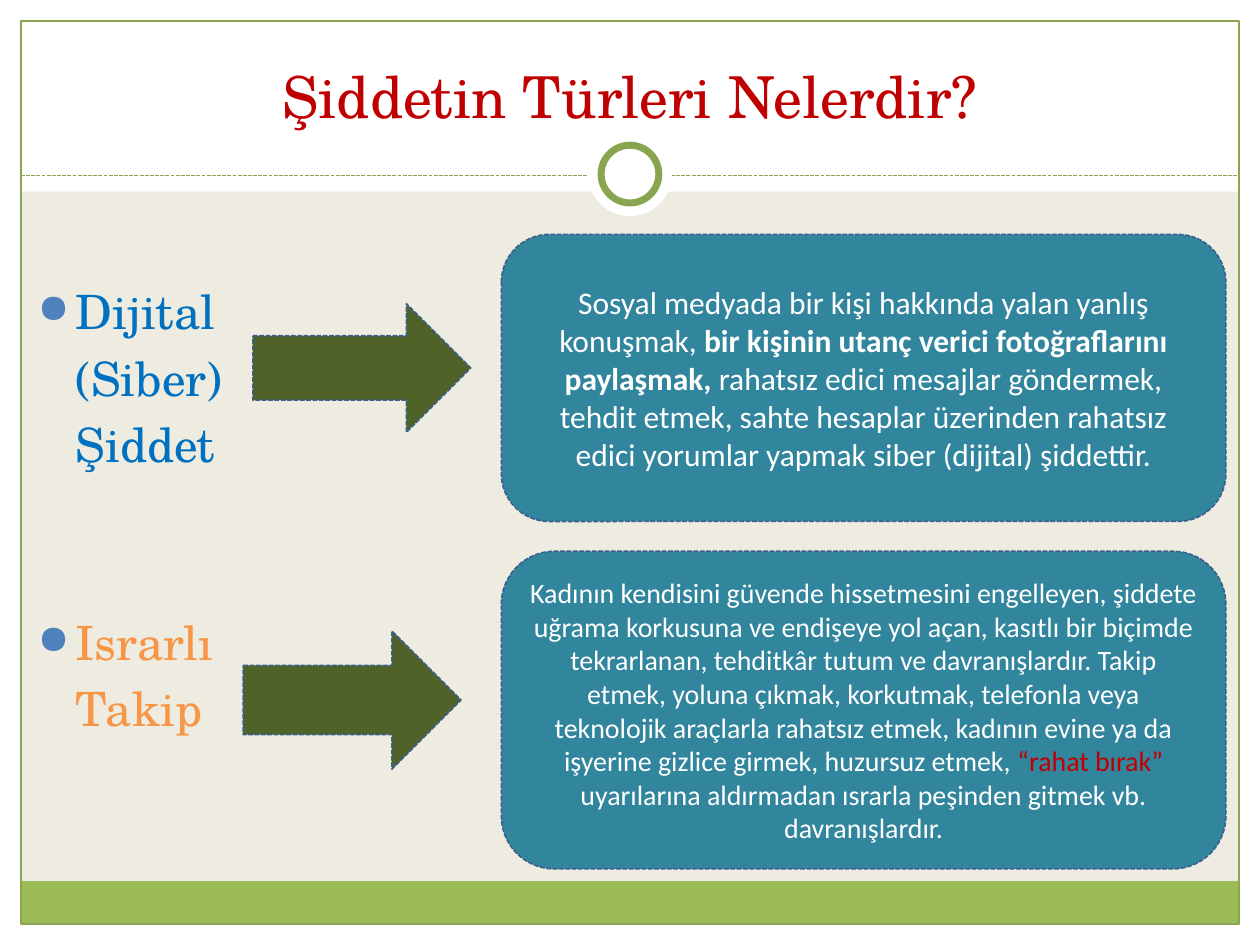
from lxml import etree
from pptx import Presentation
from pptx.dml.color import RGBColor
from pptx.enum.dml import MSO_LINE
from pptx.enum.shapes import MSO_CONNECTOR, MSO_SHAPE
from pptx.enum.text import MSO_ANCHOR, PP_ALIGN
from pptx.oxml.ns import qn
from pptx.util import Pt

RECTANGLE = MSO_SHAPE.RECTANGLE
ELLIPSE = MSO_SHAPE.OVAL
ARROW = MSO_SHAPE.RIGHT_ARROW
ROUNDED = MSO_SHAPE.ROUNDED_RECTANGLE
DASH = MSO_LINE.SQUARE_DOT
CENTER = PP_ALIGN.CENTER

WHITE = RGBColor(0xFF, 0xFF, 0xFF)
CREAM = RGBColor(0xEE, 0xEC, 0xE1)
GREEN = RGBColor(0x9B, 0xBB, 0x59)
DARK_GREEN = RGBColor(0x89, 0xA5, 0x4F)
OLIVE = RGBColor(0x4F, 0x62, 0x28)
TEAL = RGBColor(0x31, 0x85, 0x9C)
OUTLINE = RGBColor(0x3A, 0x5F, 0x8C)
RED = RGBColor(0xC0, 0x00, 0x00)
BLUE = RGBColor(0x00, 0x70, 0xC0)
ORANGE = RGBColor(0xF7, 0x96, 0x46)

WIDTH, HEIGHT, MARGIN = 720, 540, 12
INNER_WIDTH, INNER_HEIGHT = WIDTH - 2 * MARGIN, HEIGHT - 2 * MARGIN
HEADER_HEIGHT = 109.5
FOOTER_HEIGHT = 24.5
DIVIDER_Y = 100.5
RING_CENTER_Y = 99.5


class SlideBuilder:
    heading_font = "TeX Gyre Schola"
    body_font = "Calibri"
    label_size = 27
    bullet_indent = 21.6
    bullet_color = "4F81BD"

    def __init__(self, slide):
        self.slide = slide

    def format_run(self, run, font, size, color, bold=False):
        run.font.name = font
        run.font.size = Pt(size)
        run.font.color.rgb = color
        run.font.bold = bold

    def shape(self, kind, left, top, width, height, fill=None, line=None,
              weight=0.75, dash=None):
        shape = self.slide.shapes.add_shape(
            kind, Pt(left), Pt(top), Pt(width), Pt(height))
        shape.shadow.inherit = False
        if fill is None:
            shape.fill.background()
        else:
            shape.fill.solid()
            shape.fill.fore_color.rgb = fill
        if line is None:
            shape.line.fill.background()
        else:
            shape.line.color.rgb = line
            shape.line.width = Pt(weight)
            if dash is not None:
                shape.line.dash_style = dash
        return shape

    def circle(self, diameter, line=None, weight=0.75):
        """Draw a white circle centred on the divider."""
        self.shape(ELLIPSE, (WIDTH - diameter) / 2, RING_CENTER_Y - diameter / 2,
                   diameter, diameter, WHITE, line, weight)

    def divider(self, left, right, y):
        connector = self.slide.shapes.add_connector(
            MSO_CONNECTOR.STRAIGHT, Pt(left), Pt(y), Pt(right), Pt(y))
        connector.line.color.rgb = DARK_GREEN
        connector.line.width = Pt(0.75)
        connector.line.dash_style = DASH
        properties = connector.element.find(qn("p:spPr"))
        etree.SubElement(properties, qn("a:effectLst"))

    def title(self, text, left, top, width, height):
        title = self.slide.shapes.title
        title.left, title.top = Pt(left), Pt(top)
        title.width, title.height = Pt(width), Pt(height)
        title.element.getparent().append(title.element)  # bring to front
        frame = title.text_frame
        frame.text = text
        frame.vertical_anchor = MSO_ANCHOR.BOTTOM
        frame.paragraphs[0].alignment = CENTER
        self.format_run(frame.paragraphs[0].runs[0], self.heading_font, 33, RED)

    def label(self, lines, top, color):
        """Write a label whose first line carries the bullet."""
        box = self.slide.shapes.add_textbox(
            Pt(14.4), Pt(top), Pt(130), Pt(38 * len(lines) + 7))
        frame = box.text_frame
        frame.word_wrap = True
        frame.text = "\n".join(lines)
        for index, paragraph in enumerate(frame.paragraphs):
            paragraph.space_before = Pt(5.4 if index else 0)
            self.format_run(paragraph.runs[0], self.heading_font,
                            self.label_size, color)
            properties = paragraph._p.get_or_add_pPr()
            properties.set("marL", str(Pt(self.bullet_indent)))
            if index == 0:
                self.bullet(properties)

    def bullet(self, properties):
        properties.set("indent", str(-Pt(self.bullet_indent)))
        color = etree.SubElement(properties, qn("a:buClr"))
        etree.SubElement(color, qn("a:srgbClr"), val=self.bullet_color)
        etree.SubElement(properties, qn("a:buSzPct"), val="85000")
        etree.SubElement(properties, qn("a:buChar"), char="●")

    def arrow(self, left, top, width, height):
        self.shape(ARROW, left, top, width, height, OLIVE, OUTLINE, 0.9, DASH)

    def description(self, top, height, size, parts):
        """Draw a rounded box; parts are (text, color, bold) tuples."""
        box = self.shape(ROUNDED, 286.5, top, 414, height, TEAL, OUTLINE, 0.9, DASH)
        frame = box.text_frame
        frame.word_wrap = True
        frame.vertical_anchor = MSO_ANCHOR.MIDDLE
        paragraph = frame.paragraphs[0]
        paragraph.alignment = CENTER
        for text, color, bold in parts:
            run = paragraph.add_run()
            run.text = text
            self.format_run(run, self.body_font, size, color, bold)


def main():
    presentation = Presentation()
    presentation.slide_width, presentation.slide_height = Pt(WIDTH), Pt(HEIGHT)
    slide = presentation.slides.add_slide(presentation.slide_layouts[5])
    slide.background.fill.solid()
    slide.background.fill.fore_color.rgb = CREAM
    builder = SlideBuilder(slide)

    for border in (
        (0, HEIGHT - MARGIN, WIDTH, MARGIN),
        (0, 0, WIDTH, HEADER_HEIGHT),
        (0, 0, MARGIN, HEIGHT),
        (WIDTH - MARGIN, 0, MARGIN, HEIGHT),
    ):
        builder.shape(RECTANGLE, *border, WHITE)
    builder.shape(RECTANGLE, MARGIN, HEIGHT - MARGIN - FOOTER_HEIGHT,
                  INNER_WIDTH, FOOTER_HEIGHT, GREEN)
    builder.shape(RECTANGLE, MARGIN, MARGIN, INNER_WIDTH, INNER_HEIGHT,
                  line=DARK_GREEN)
    builder.divider(MARGIN, WIDTH - MARGIN, DIVIDER_Y)
    builder.circle(48)
    builder.circle(33, DARK_GREEN, 4)

    builder.title("Şiddetin Türleri Nelerdir?", 24, 18, 672, 60)

    builder.label(["Dijital", "(Siber)", "Şiddet"], 158, BLUE)
    builder.arrow(144.5, 173.5, 124.5, 73.5)
    builder.description(134, 164, 18, [
        ("Sosyal medyada bir kişi hakkında yalan yanlış konuşmak, ", WHITE, False),
        ("bir kişinin utanç verici fotoğraflarını paylaşmak, ", WHITE, True),
        ("rahatsız edici mesajlar göndermek, tehdit etmek, sahte hesaplar "
         "üzerinden rahatsız edici yorumlar yapmak siber (dijital) şiddettir.",
         WHITE, False),
    ])

    builder.label(["Israrlı", "Takip"], 347, ORANGE)
    builder.arrow(139, 360.5, 124.5, 79)
    builder.description(315, 181.5, 16, [
        ("Kadının kendisini güvende hissetmesini engelleyen, şiddete uğrama "
         "korkusuna ve endişeye yol açan, kasıtlı bir biçimde tekrarlanan, "
         "tehditkâr tutum ve davranışlardır. Takip etmek, yoluna çıkmak, "
         "korkutmak, telefonla veya teknolojik araçlarla rahatsız etmek, "
         "kadının evine ya da işyerine gizlice girmek, huzursuz etmek, ",
         WHITE, False),
        ("“rahat bırak” ", RED, False),
        ("uyarılarına aldırmadan ısrarla peşinden gitmek vb. davranışlardır.",
         WHITE, False),
    ])

    presentation.save("out.pptx")


if __name__ == "__main__":
    main()
